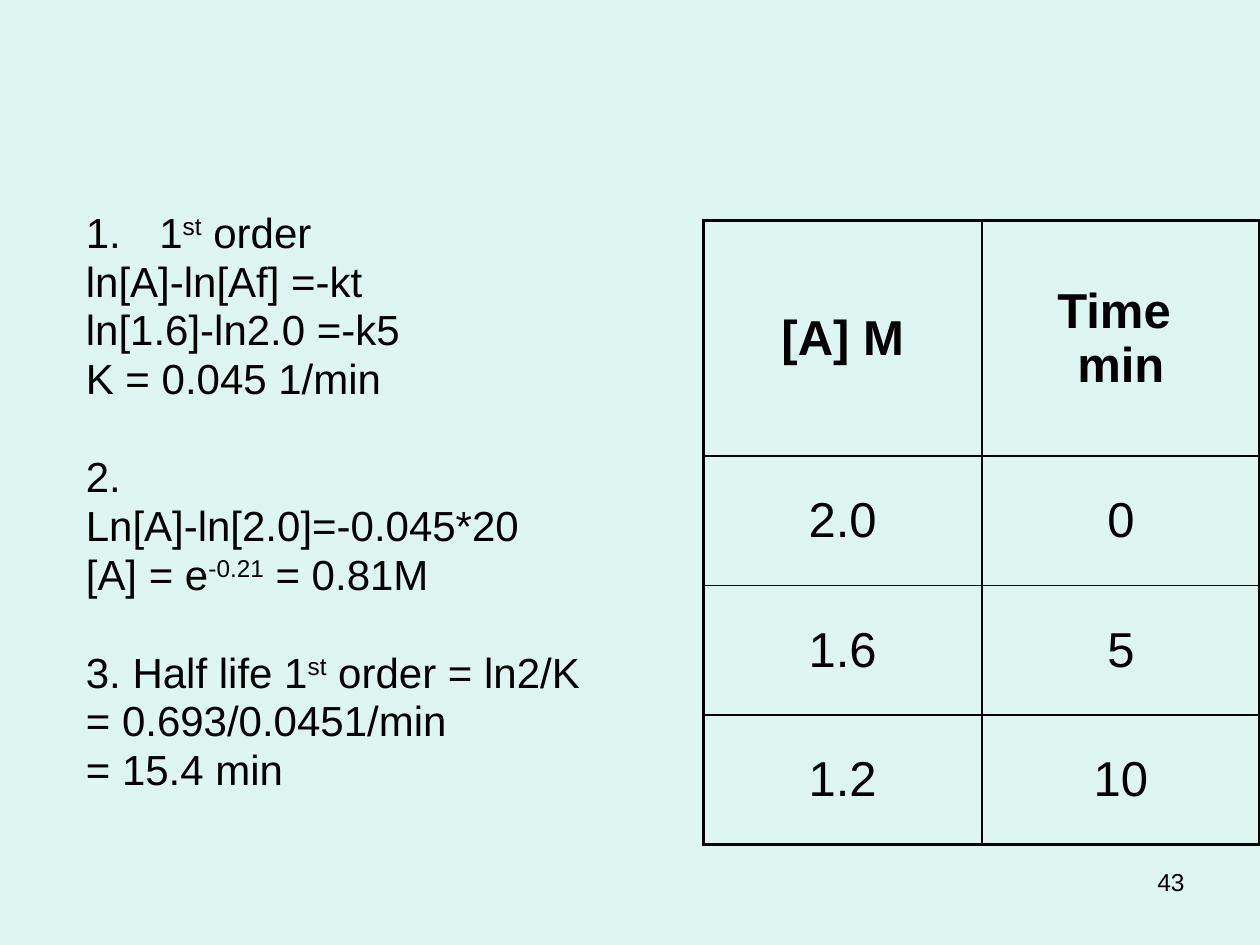
from lxml.etree import SubElement
from pptx import Presentation
from pptx.dml.color import RGBColor as RGB
from pptx.enum.text import MSO_ANCHOR as Anchor, PP_ALIGN as Align
from pptx.oxml.ns import qn
from pptx.util import Pt

COLORS = {"background": "DEF6F1", "ink": "000000"}
FONT = "Arial"

SOLUTION = [
    [["1", "^st", " order"], ["ln[A]-ln[Af] =-kt"], ["ln[1.6]-ln2.0 =-k5"], ["K = 0.045 1/min"]],
    [["2."], ["Ln[A]-ln[2.0]=-0.045*20"], ["[A] = e", "^-0.21", " = 0.81M"]],
    [["3. Half life 1", "^st", " order = ln2/K"], ["= 0.693/0.0451/min"], ["= 15.4 min"]],
]
DATA = [("[A] M", "Time \nmin"), ("2.0", "0"), ("1.6", "5"), ("1.2", "10")]
PAGE = "43"

COL_WIDTH = 159
ROW_HEIGHTS = [134.7, 74, 74, 74]
OUTER, INNER = 2.25, 1
INDENT = 42
GROUP_GAP = 33


def add_run(p, text, size, bold=False):
    r = p.add_run()
    r.text = text.removeprefix("^")
    r.font.name, r.font.size, r.font.bold = FONT, Pt(size), bold
    r.font.color.rgb = RGB.from_string(COLORS["ink"])
    if text.startswith("^"):
        r.font._element.set("baseline", "30000")


def space_before_percent(p, percent):
    before = p._p.get_or_add_pPr().get_or_add_spcBef()
    SubElement(before, qn("a:spcPct"), val=str(percent * 1000))


def add_box(s, left, top, width, height):
    tf = s.shapes.add_textbox(Pt(left), Pt(top), Pt(width), Pt(height)).text_frame
    tf.word_wrap = True
    return tf


def add_solution(s):
    tf = add_box(s, 42, 120, 318, 356.5)
    p = tf.paragraphs[0]
    for g, group in enumerate(SOLUTION):
        for i, line in enumerate(group):
            first = g == i == 0
            if not first:
                p = tf.add_paragraph()
            p.line_spacing = 0.8
            if g and i == 0:
                p.space_before = Pt(GROUP_GAP)
            else:
                space_before_percent(p, 20)
            pPr = p._p.get_or_add_pPr()
            pPr.set("marL", str(Pt(INDENT)))
            pPr.set("indent", str(-Pt(INDENT)))
            if first:
                SubElement(pPr, qn("a:buFont"), typeface=FONT)
                SubElement(pPr, qn("a:buAutoNum"), type="arabicPeriod")
            for text in line:
                add_run(p, text, 24)


def set_border(cell, side, width):
    ln = SubElement(cell._tc.get_or_add_tcPr(), qn(f"a:ln{side}"), w=str(Pt(width)))
    SubElement(SubElement(ln, qn("a:solidFill")), qn("a:srgbClr"), val=COLORS["ink"])


def add_data_table(s):
    rows, cols = len(DATA), len(DATA[0])
    table = s.shapes.add_table(rows, cols, Pt(402), Pt(126),
                               Pt(COL_WIDTH * cols), Pt(sum(ROW_HEIGHTS))).table
    table.first_row = table.horz_banding = False
    for col in table.columns:
        col.width = Pt(COL_WIDTH)
    for i, values in enumerate(DATA):
        table.rows[i].height = Pt(ROW_HEIGHTS[i])
        for j, value in enumerate(values):
            cell = table.cell(i, j)
            edges = {"L": j == 0, "R": j == cols - 1, "T": i == 0, "B": i == rows - 1}
            for side, outer in edges.items():
                set_border(cell, side, OUTER if outer else INNER)
            cell.fill.background()
            cell.vertical_anchor = Anchor.MIDDLE
            p = cell.text_frame.paragraphs[0]
            p.alignment = Align.CENTER
            space_before_percent(p, 20)
            for k, text in enumerate(value.split("\n")):
                if k:
                    p.add_line_break()
                add_run(p, text, 28, bold=i == 0)


def add_page_number(s):
    p = add_box(s, 516, 492, 168, 37.5).paragraphs[0]
    p.alignment = Align.RIGHT
    add_run(p, PAGE, 14)


def main():
    prs = Presentation()
    prs.slide_width, prs.slide_height = Pt(720), Pt(540)
    s = prs.slides.add_slide(prs.slide_layouts[6])
    fill = s.background.fill
    fill.solid()
    fill.fore_color.rgb = RGB.from_string(COLORS["background"])
    add_page_number(s)
    add_solution(s)
    add_data_table(s)
    prs.save("out.pptx")


if __name__ == "__main__":
    main()
